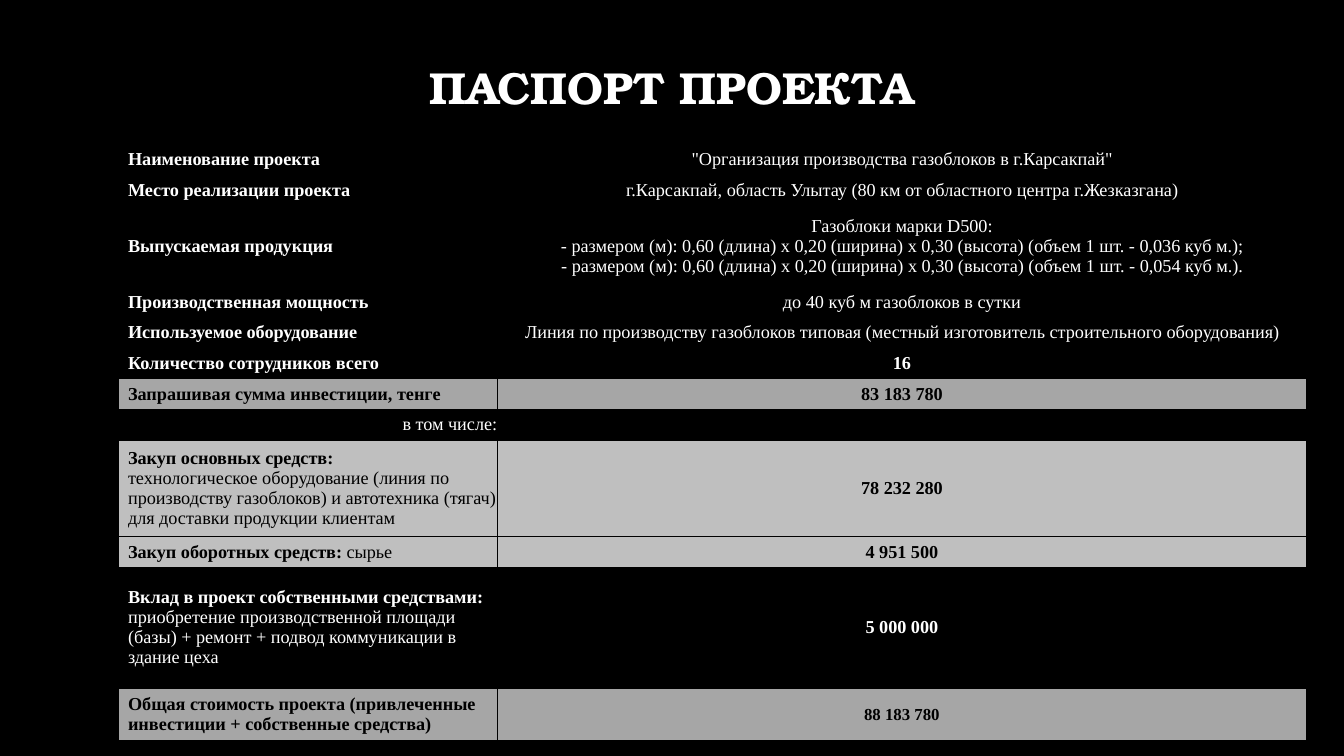
from dataclasses import dataclass

import lxml.etree
import pptx
import pptx.dml.color
import pptx.enum.text
import pptx.oxml.ns
import pptx.util

Inches = pptx.util.Inches
Pt = pptx.util.Pt
Color = pptx.dml.color.RGBColor
Align = pptx.enum.text.PP_ALIGN
Anchor = pptx.enum.text.MSO_ANCHOR
qn = pptx.oxml.ns.qn

BLACK = Color(0x00, 0x00, 0x00)
WHITE = Color(0xFF, 0xFF, 0xFF)
GRAY = Color(0xA6, 0xA6, 0xA6)
SILVER = Color(0xBF, 0xBF, 0xBF)

WIDTHS = (3.76, 8.03)
HEIGHT = 5.92


@dataclass
class Row:
    label: str
    value: str
    note: str = ""
    split: bool = False
    fill: Color | None = None
    strong: bool = True
    loud: bool = True
    align: Align = Align.LEFT
    size: int = 13
    tall: float | None = None


ROWS = [
    Row("Наименование проекта", '"Организация производства газоблоков в г.Карсакпай"', loud=False),
    Row("Место реализации проекта",
        "г.Карсакпай, область Улытау (80 км от областного центра г.Жезказгана)", loud=False),
    Row("Выпускаемая продукция",
        "Газоблоки марки D500:\n"
        "- размером (м): 0,60 (длина) х 0,20 (ширина) х 0,30 (высота) (объем 1 шт. - 0,036 куб м.);\n"
        "- размером (м): 0,60 (длина) х 0,20 (ширина) х 0,30 (высота) (объем 1 шт. - 0,054 куб м.).",
        loud=False, tall=0.81),
    Row("Производственная мощность", "до 40 куб м газоблоков в сутки", loud=False),
    Row("Используемое оборудование",
        "Линия по производству газоблоков типовая (местный изготовитель строительного оборудования)",
        loud=False),
    Row("Количество сотрудников всего", "16"),
    Row("Запрашивая сумма инвестиции, тенге", "83 183 780", fill=GRAY),
    Row("в том числе:", "", strong=False, align=Align.RIGHT),
    Row("Закуп основных средств:", "78 232 280",
        "технологическое оборудование (линия по производству газоблоков) и автотехника "
        "(тягач) для доставки продукции клиентам", split=True, fill=SILVER, tall=0.96),
    Row("Закуп оборотных средств:", "4 951 500", " сырье", fill=SILVER),
    Row("Вклад в проект собственными средствами:", "5 000 000",
        "приобретение производственной площади (базы) + ремонт + подвод коммуникации в здание цеха",
        split=True, tall=1.2),
    Row("Общая стоимость проекта (привлеченные инвестиции + собственные средства)",
        "88 183 780", fill=GRAY, size=12, tall=0.52),
]


def style(para, face: str, size: int, color: Color, align: Align) -> None:
    para.alignment = align
    para.font.name = face
    para.font.size = Pt(size)
    para.font.color.rgb = color


def edge(cell) -> None:
    props = cell._tc.get_or_add_tcPr()
    for side in ("lnL", "lnR", "lnT", "lnB"):
        line = lxml.etree.SubElement(props, qn(f"a:{side}"), w=str(Pt(0.5)))
        solid = lxml.etree.SubElement(line, qn("a:solidFill"))
        lxml.etree.SubElement(solid, qn("a:srgbClr"), val=str(BLACK))


def setup(cell, row: Row, left: float, size: int, align: Align):
    edge(cell)
    if row.fill is None:
        cell.fill.background()
    else:
        cell.fill.solid()
        cell.fill.fore_color.rgb = row.fill
    cell.margin_left = Inches(left)
    cell.margin_right = cell.margin_top = cell.margin_bottom = 0
    cell.vertical_anchor = Anchor.MIDDLE
    para = cell.text_frame.paragraphs[0]
    style(para, "Times New Roman", size, BLACK if row.fill else WHITE, align)
    return para


def write(para, text: str, bold: bool) -> None:
    for i, line in enumerate(text.split("\n")):
        if i:
            para.add_line_break()
        run = para.add_run()
        run.text = line
        run.font.bold = bold


def title(slide) -> None:
    box = slide.shapes.add_textbox(Inches(1.74), Inches(0.48), Inches(9.84), Inches(0.7))
    frame = box.text_frame
    frame.word_wrap = True
    frame.vertical_anchor = Anchor.BOTTOM
    para = frame.paragraphs[0]
    para.text = "ПАСПОРТ ПРОЕКТА"
    para.line_spacing = 0.9
    style(para, "TeX Gyre Bonum", 32, WHITE, Align.CENTER)
    para.font.bold = True


def grid(slide) -> None:
    table = slide.shapes.add_table(
        len(ROWS), len(WIDTHS), Inches(1.17), Inches(1.43), Inches(sum(WIDTHS)), Inches(HEIGHT)
    ).table
    table.first_row = table.horz_banding = False
    for col, width in zip(table.columns, WIDTHS):
        col.width = Inches(width)
    talls = [row.tall for row in ROWS if row.tall]
    short = (HEIGHT - sum(talls)) / (len(ROWS) - len(talls))
    for i, row in enumerate(ROWS):
        table.rows[i].height = Inches(row.tall or short)
        para = setup(table.cell(i, 0), row, 0.1, 13, row.align)
        write(para, row.label, row.strong)
        if row.split:
            para.add_line_break()
        if row.note:
            write(para, row.note, False)
        para = setup(table.cell(i, 1), row, 0, row.size, Align.CENTER)
        if row.value:
            write(para, row.value, row.loud)


def main() -> None:
    deck = pptx.Presentation()
    deck.slide_width = Inches(13.33)
    deck.slide_height = Inches(7.5)
    slide = deck.slides.add_slide(deck.slide_layouts[6])
    slide.background.fill.solid()
    slide.background.fill.fore_color.rgb = BLACK
    title(slide)
    grid(slide)
    deck.save("out.pptx")


if __name__ == "__main__":
    main()
